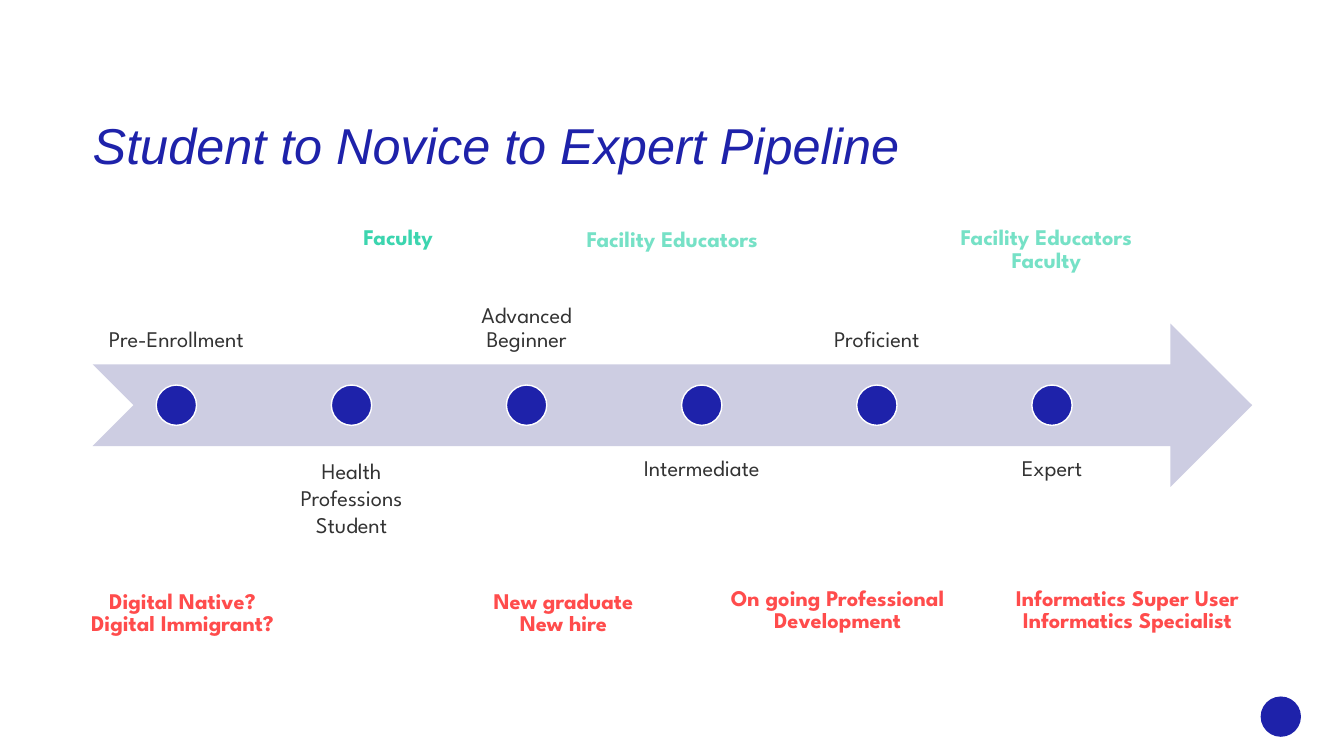
from lxml.etree import SubElement
from pptx import Presentation
from pptx.dml.color import RGBColor
from pptx.enum.shapes import MSO_SHAPE as Shape
from pptx.enum.text import MSO_ANCHOR as Anchor, MSO_AUTO_SIZE as AutoSize, PP_ALIGN as Align
from pptx.oxml.ns import qn
from pptx.util import Inches, Pt

NAVY, LAVENDER, WHITE, GREY = "1E22AA", "CDCDE2", "FFFFFF", "333333"
GREEN, RED = "3CD5AF", "FF0000"

deck = Presentation()
deck.slide_width, deck.slide_height = Inches(13.33), Inches(7.5)
page = deck.slides.add_slide(deck.slide_layouts[6])

# All positions are on a grid of 100 columns by 100 rows
COL, ROW = deck.slide_width / 100, deck.slide_height / 100


def paint(color, value, opacity=100):
    """Set a colour from a hex string, with opacity in percent."""
    color.rgb = RGBColor.from_string(value)
    if opacity < 100:
        alpha = SubElement(color._xFill.find(qn("a:srgbClr")), qn("a:alpha"))
        alpha.set("val", str(opacity * 1000))


def add_text(shapes, text, left, top, width, height, *, color, size=16, font="League Spartan",
             bold=False, italic=False, opacity=100, align=Align.CENTER, anchor=Anchor.TOP,
             spacing=None, inset=(0, 0), grow=False):
    """Add a text box; each line of the text is one paragraph."""
    box = shapes.add_textbox(int(left * COL), int(top * ROW), int(width * COL), int(height * ROW))
    frame = box.text_frame
    frame.word_wrap = True
    frame.auto_size = AutoSize.SHAPE_TO_FIT_TEXT if grow else AutoSize.NONE
    frame.vertical_anchor = anchor
    frame.margin_left = frame.margin_right = Inches(inset[0])
    frame.margin_top = frame.margin_bottom = Inches(inset[1])
    frame.text = text
    for para in frame.paragraphs:
        para.alignment, para.line_spacing = align, spacing
        for span in para.runs:
            span.font.name, span.font.size = font, Pt(size)
            span.font.bold, span.font.italic = bold, italic
            span.font.fill.solid()
            paint(span.font.fill.fore_color, color, opacity)


# Title
MARGIN = 6.9
add_text(page.shapes, "Student to Novice to Expert Pipeline", MARGIN, 16, 86.85, 14.5,
         color=NAVY, size=36, font="Arial", italic=True, align=Align.LEFT, spacing=0.9)

# Pipeline arrow
pipeline = page.shapes.add_group_shape().shapes
BAND_TOP, BAND_HEIGHT = 42.8, 21.6
arrow = pipeline.add_shape(Shape.NOTCHED_RIGHT_ARROW, int(MARGIN * COL), int(BAND_TOP * ROW),
                           int(86.27 * COL), int(BAND_HEIGHT * ROW))
arrow.shadow.inherit = False
arrow.fill.solid()
paint(arrow.fill.fore_color, LAVENDER)
arrow.line.fill.background()

# Stage labels, alternately above and below the arrow
STAGES = ["Pre-Enrollment", "Health Professions\nStudent", "Advanced Beginner",
          "Intermediate", "Proficient", "Expert"]
STEP, STAGE_WIDTH, DOT = 13.03, 12.45, Inches(0.4)
dots = []
for number, stage in enumerate(STAGES):
    left = MARGIN + number * STEP
    above = number % 2 == 0
    add_text(pipeline, stage, left, 26.67 if above else 58.93, STAGE_WIDTH, BAND_HEIGHT,
             color=GREY, anchor=Anchor.BOTTOM if above else Anchor.TOP,
             spacing=1.0 if "\n" in stage else 0.9, inset=(0.12, 0.12))
    dots.append((pipeline, left + STAGE_WIDTH / 2, BAND_TOP + BAND_HEIGHT / 2, True))

# Stage dots, and the corner dot without an outline
dots.append((page.shapes, 95.3, 94.8, False))
for shapes, center, middle, outlined in dots:
    dot = shapes.add_shape(Shape.OVAL, int(center * COL - DOT / 2), int(middle * ROW - DOT / 2),
                           DOT, DOT)
    dot.shadow.inherit = False
    dot.fill.solid()
    paint(dot.fill.fore_color, NAVY)
    if outlined:
        dot.line.width = Pt(1)
        paint(dot.line.color, WHITE)
    else:
        dot.line.fill.background()

# Teachers above the pipeline, learners below it
NOTES = [
    ("Digital Native?\nDigital Immigrant?", 5.1, 77.47, 16.95, RED, 70),
    ("New graduate\nNew hire", 29.62, 77.47, 24.6, RED, 70),
    ("On going Professional Development", 50.02, 77.07, 24.6, RED, 70),
    ("Informatics Super User\nInformatics Specialist", 74.62, 77.07, 18.53, RED, 70),
    ("Faculty", 21.15, 29.33, 16.95, GREEN, 100),
    ("Facility Educators", 41.55, 29.6, 16.95, GREEN, 70),
    ("Facility Educators\nFaculty", 69.38, 29.33, 16.95, GREEN, 70),
]
for text, left, top, width, color, opacity in NOTES:
    height = 4.4 if color == GREEN and "\n" not in text else 7.33
    add_text(page.shapes, text, left, top, width, height, color=color, opacity=opacity,
             bold=True, spacing=Pt(16.4), inset=(0, 0.05), grow=True)

deck.save("out.pptx")
